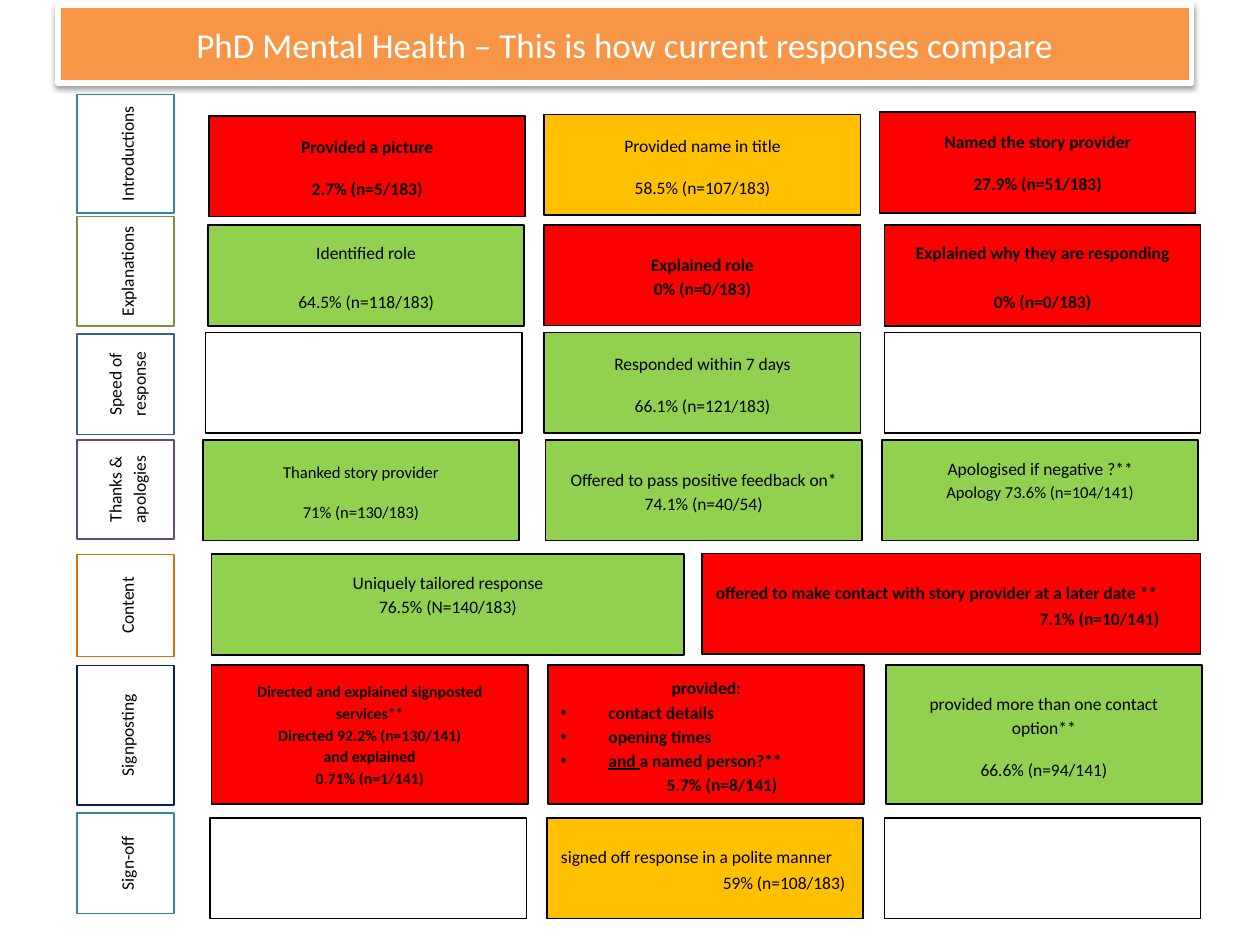
from dataclasses import dataclass

from pptx import Presentation
from pptx.dml.color import RGBColor
from pptx.enum.shapes import MSO_SHAPE as SHAPE
from pptx.enum.text import MSO_ANCHOR as ANCHOR, PP_ALIGN as ALIGN
from pptx.oxml import parse_xml
from pptx.oxml.ns import nsdecls
from pptx.util import Pt

WHITE = RGBColor(0xFF, 0xFF, 0xFF)
BLACK = RGBColor(0, 0, 0)
ORANGE = RGBColor(0xF7, 0x96, 0x46)
RED = RGBColor(0xFF, 0, 0)
AMBER = RGBColor(0xFF, 0xC0, 0)
GREEN = RGBColor(0x92, 0xD0, 0x50)
TEAL = RGBColor(0x31, 0x85, 0x9C)
OLIVE = RGBColor(0x77, 0x93, 0x3C)
BLUE = RGBColor(0x37, 0x60, 0x92)
PURPLE = RGBColor(0x60, 0x4A, 0x7B)
DARK_ORANGE = RGBColor(0xE4, 0x6C, 0x0A)
NAVY = RGBColor(0, 0x20, 0x60)

FONT = "Calibri"
ROW_LEFT, LABEL_W = 43.9, 55.4
CARD_W, CARD_H, TALL_H = 180.7, 57.6, 79.2
HANGING = 27.4
LABEL_MARGINS = {f"margin_{side}": Pt(3) for side in ("left", "top", "right", "bottom")}


@dataclass
class Line:
    text: str
    after: float = 0
    size: float = 10
    align: ALIGN = ALIGN.CENTER
    indent: float = 0
    bullet: bool = False
    underlined: str = ""


@dataclass
class Card:
    left: float
    top: float
    fill: RGBColor
    lines: tuple = ()
    width: float = CARD_W
    height: float = CARD_H
    lift: float = 0


def bullet(text, underlined=""):
    return Line(text, align=ALIGN.LEFT, indent=HANGING, bullet=True, underlined=underlined)


def pair(first, second, after=10, size=10):
    return Line(first, after, size), Line(second, size=size)


def set_attrs(target, values):
    for name, value in values.items():
        setattr(target, name, value)


def add_box(slide, box, fill, line, line_w=1):
    sp = slide.shapes.add_shape(SHAPE.RECTANGLE, *map(Pt, box))
    sp.shadow.inherit = False
    sp.fill.solid()
    sp.fill.fore_color.rgb = fill
    sp.line.color.rgb = line
    sp.line.width = Pt(line_w)
    set_attrs(sp.text_frame, {"word_wrap": True, "vertical_anchor": ANCHOR.MIDDLE})
    return sp


def add_run(p, text, color=BLACK, **fmt):
    r = p.add_run()
    r.text = text
    r.font.color.rgb = color
    set_attrs(r.font, {"name": FONT, **fmt})


def write_lines(tf, lines, bold=False):
    for i, line in enumerate(lines):
        p = tf.add_paragraph() if i else tf.paragraphs[0]
        set_attrs(p, {"alignment": line.align, "line_spacing": 1.15,
                      "space_before": Pt(0), "space_after": Pt(line.after)})
        pPr = p._p.get_or_add_pPr()
        if line.indent:
            pPr.set("marL", str(Pt(line.indent)))
        if line.bullet:
            pPr.set("indent", str(-Pt(line.indent)))
            pPr.append(parse_xml(f'<a:buFont {nsdecls("a")} typeface="Arial"/>'))
            pPr.append(parse_xml(f'<a:buChar {nsdecls("a")} char="•"/>'))
        if line.underlined:
            add_run(p, line.underlined, size=Pt(line.size), bold=bold, underline=True)
        add_run(p, line.text, size=Pt(line.size), bold=bold)


# Title banner with a soft shadow
def add_title(slide, box, text):
    sp = add_box(slide, box, ORANGE, WHITE, 3)
    effects = sp._element.spPr.find("{http://schemas.openxmlformats.org/drawingml/2006/main}effectLst")
    effects.append(parse_xml(
        f'<a:outerShdw {nsdecls("a")} blurRad="{Pt(3.1)}" dist="{Pt(1.6)}" dir="5400000" '
        'rotWithShape="0"><a:srgbClr val="000000"><a:alpha val="38000"/></a:srgbClr></a:outerShdw>'))
    p = sp.text_frame.paragraphs[0]
    p.alignment = ALIGN.CENTER
    add_run(p, text, WHITE, size=Pt(20))


# Row: a rotated label, then cards placed from the label's corner
def add_row(slide, box, label, color, cards):
    x, y, _, _ = box
    tf = add_box(slide, box, WHITE, color).text_frame
    tf._txBody.bodyPr.set("vert", "vert270")
    set_attrs(tf, LABEL_MARGINS)
    write_lines(tf, [Line(label)])
    for card in cards:
        place = (x + card.left, y + card.top, card.width, card.height)
        tf = add_box(slide, place, card.fill, BLACK).text_frame
        if card.lift:
            tf.margin_bottom = Pt(3.6 + 2 * card.lift)
        write_lines(tf, card.lines, bold=card.fill == RED)


# Rows: top, label height, label, label colour, cards
ROWS = [
    (54, 67.7, "Introductions", TEAL, [
        Card(75.5, 12.2, RED, pair("Provided a picture", "2.7% (n=5/183)")),
        Card(267.1, 11.5, AMBER, pair("Provided name in title", "58.5% (n=107/183)")),
        Card(458.6, 10.1, RED, pair("Named the story provider", "27.9% (n=51/183)"), lift=0.7)]),
    (123.8, 62.6, "Explanations", OLIVE, [
        Card(74.9, 5, GREEN, pair("Identified role", "64.5% (n=118/183)", 14)),
        Card(267.1, 4.6, RED, pair("Explained role", "0% (n=0/183)", 0)),
        Card(461.5, 5, RED, pair("Explained why they are responding", "0% (n=0/183)", 14))]),
    (190.8, 57.6, "Speed of response", BLUE, [
        Card(73.5, -0.7, WHITE),
        Card(267.1, -0.7, GREEN, pair("Responded within 7 days", "66.1% (n=121/183)")),
        Card(461.5, -0.7, WHITE)]),
    (251.3, 56.9, "Thanks & apologies", PURPLE, [
        Card(72, 0, GREEN, pair("Thanked story provider", "71% (n=130/183)", size=9.5)),
        Card(267.8, 0, GREEN, pair("Offered to pass positive feedback on*", "74.1% (n=40/54)", 0)),
        Card(460.1, 0, GREEN, (Line("Apologised if negative ?**"),
                               Line("Apology 73.6% (n=104/141)", size=9.5)), lift=6.5)]),
    (316.8, 58.3, "Content", DARK_ORANGE, [
        Card(77, 0, GREEN, pair("Uniquely tailored response", "76.5% (N=140/183)", 0),
             width=270, lift=6.5),
        Card(357.1, -0.5, RED, (
            Line("offered to make contact with story provider at a later date **", 1.5,
                 align=ALIGN.LEFT, indent=1),
            Line("7.1% (n=10/141)", align=ALIGN.LEFT, indent=186)), width=285.1)]),
    (380.2, 79.9, "Signposting", NAVY, [
        Card(77, 0, RED, [Line(text, size=9) for text in (
            "Directed and explained signposted services**", "Directed 92.2% (n=130/141)",
            "and explained", "0.71% (n=1/141)")], height=TALL_H, lift=0.7),
        Card(269.3, 0, RED, (
            Line("provided:"), bullet("contact details"), bullet("opening times"),
            bullet("a named person?**", "and "), Line("5.7% (n=8/141)", indent=18)),
            height=TALL_H),
        Card(462.2, 0, GREEN, pair("provided more than one contact option**",
                                   "66.6% (n=94/141)"), height=TALL_H)]),
    (464.4, 57.6, "Sign-off", TEAL, [
        Card(76.3, 2.9, WHITE),
        Card(268.6, 2.9, AMBER, (
            Line("signed off response in a polite manner", 1, align=ALIGN.LEFT, indent=1),
            Line("59% (n=108/183)", align=ALIGN.LEFT, indent=93.5))),
        Card(461.5, 2.9, WHITE)]),
]


def main():
    prs = Presentation()
    prs.slide_width, prs.slide_height = Pt(720), Pt(540)
    slide = prs.slides.add_slide(prs.slide_layouts[6])
    add_title(slide, (33.1, 2.9, 648, 44.6),
              "PhD Mental Health – This is how current responses compare")
    for top, height, label, color, cards in ROWS:
        add_row(slide, (ROW_LEFT, top, LABEL_W, height), label, color, cards)
    prs.save("out.pptx")


if __name__ == "__main__":
    main()
